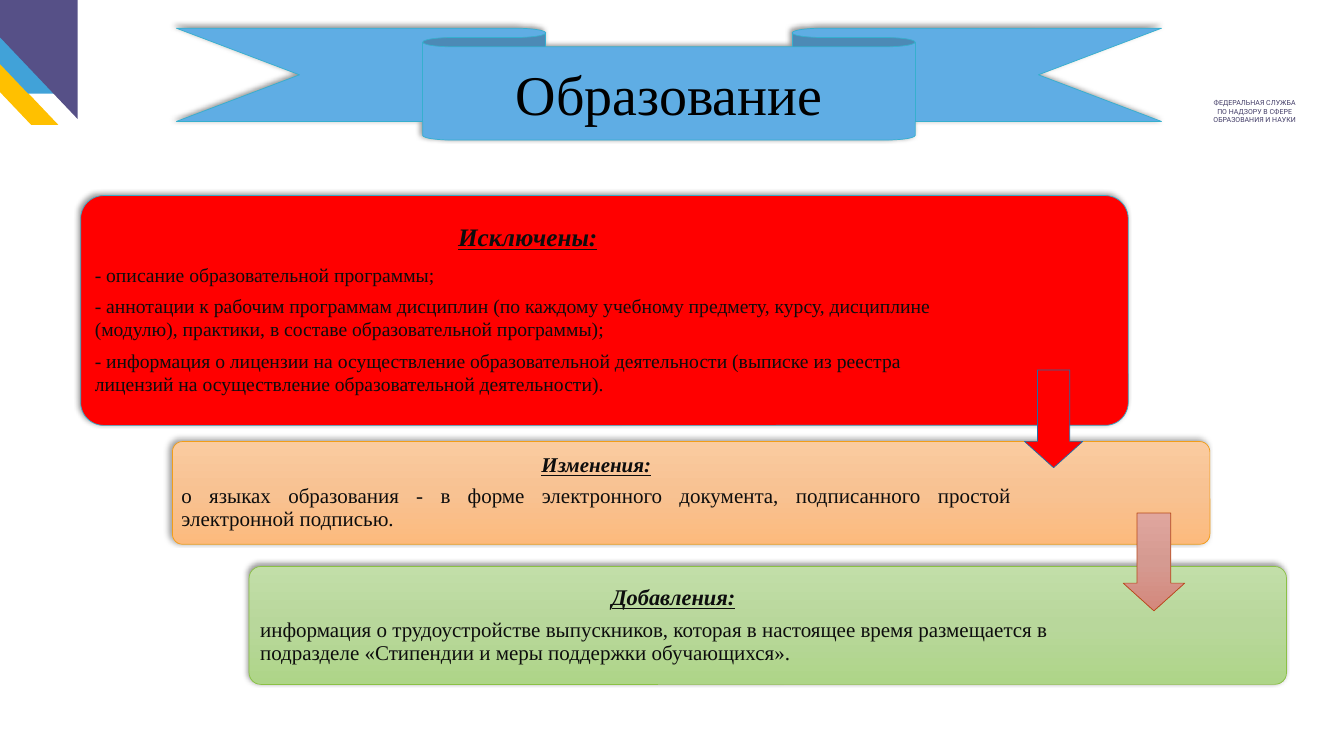
from dataclasses import dataclass

from lxml.etree import SubElement
from pptx import Presentation
from pptx.dml.color import RGBColor
from pptx.enum.shapes import MSO_SHAPE as Shape
from pptx.enum.text import MSO_ANCHOR as Anchor, MSO_AUTO_SIZE as AutoSize, PP_ALIGN as Align
from pptx.oxml.ns import qn
from pptx.util import Inches, Pt


@dataclass(frozen=True)
class Theme:
    serif: str = "Times New Roman"
    sans: str = "Roboto"
    black: str = "000000"
    ink: str = "0D0D0D"
    agency: str = "413B66"
    gold: str = "FFC000"
    sky: str = "41A2D8"
    violet: str = "565087"
    ribbon: str = "5FADE4"
    teal: str = "36AFCE"
    red: str = "FF0000"
    arrow_line: str = "1D6FA9"
    orange: tuple = ("FACBA0", "F8C292", "FCBA7D")
    orange_line: str = "F19D19"
    green: tuple = ("C2DEA8", "B8D79B", "AED588")
    green_line: str = "8BC145"
    rose: tuple = ("E0A69E", "D59A91", "D4887C")
    rose_line: str = "B74919"
    title_size: float = 40
    agency_size: float = 5
    body_size: float = 14
    note_size: float = 15
    line_width: float = 0.5


def write(frame, text, first=False, size=14, font="Times New Roman", color="000000",
          align=Align.LEFT, heading=False, spacing=1.0, after=0):
    paragraph = frame.paragraphs[0] if first else frame.add_paragraph()
    paragraph.alignment = align
    paragraph.line_spacing = spacing
    paragraph.space_before = Pt(0)
    paragraph.space_after = Pt(after)
    run = paragraph.add_run()
    run.text = text
    run.font.name = font
    run.font.size = Pt(size)
    run.font.color.rgb = RGBColor.from_string(color)
    run.font.bold = run.font.italic = run.font.underline = heading


class SlideBuilder:
    def __init__(self, slide, theme):
        self.slide = slide
        self.theme = theme

    def shape(self, kind, box, fill, line=None, adjustments=(), flip=(), shadow=False):
        shape = self.slide.shapes.add_shape(kind, *map(Inches, box))
        shape.shadow.inherit = False
        for index, value in enumerate(adjustments):
            shape.adjustments[index] = value
        for attribute in flip:
            shape._element.spPr.xfrm.set(attribute, "1")
        if isinstance(fill, tuple):
            self.gradient(shape, fill)
        else:
            shape.fill.solid()
            shape.fill.fore_color.rgb = RGBColor.from_string(fill)
        if line:
            shape.line.color.rgb = RGBColor.from_string(line)
            shape.line.width = Pt(self.theme.line_width)
        else:
            shape.line.fill.background()
        if shadow:
            self.shadow(shape)
        return shape

    def gradient(self, shape, colors):
        shape.fill.gradient()
        shape.fill.gradient_angle = 270
        stops = shape._element.spPr.find(qn("a:gradFill")).find(qn("a:gsLst"))
        for stop in list(stops):
            stops.remove(stop)
        for index, color in enumerate(colors):
            stop = SubElement(stops, qn("a:gs"), pos=str(index * 50000))
            SubElement(stop, qn("a:srgbClr"), val=color)

    def shadow(self, shape):
        effects = shape._element.spPr.find(qn("a:effectLst"))
        outer = SubElement(effects, qn("a:outerShdw"), blurRad=str(Pt(4)), dist=str(Pt(3)),
                           dir=str(225 * 60000), algn="br", rotWithShape="0")
        color = SubElement(outer, qn("a:srgbClr"), val=self.theme.black)
        SubElement(color, qn("a:alpha"), val="40000")

    def text_box(self, box, inset=None):
        frame = self.slide.shapes.add_textbox(*map(Inches, box)).text_frame
        frame.word_wrap = True
        if inset is not None:
            frame.vertical_anchor = Anchor.MIDDLE
            frame.margin_left = frame.margin_right = Inches(inset)
            frame.margin_top = frame.margin_bottom = Inches(inset)
        return frame

    def title(self, text, box):
        title = self.slide.shapes.title
        title.left, title.top, title.width, title.height = map(Inches, box)
        self.slide.shapes._spTree.append(title._element)
        frame = title.text_frame
        frame.word_wrap = True
        frame.auto_size = AutoSize.NONE
        frame.vertical_anchor = Anchor.MIDDLE
        write(frame, text, first=True, size=self.theme.title_size, font=self.theme.serif,
              color=self.theme.black, align=Align.CENTER)

    def card(self, box, text_area, inset, fill, line, heading, heading_size, body,
             body_size, body_align=Align.LEFT, body_spacing=0.9):
        self.shape(Shape.ROUNDED_RECTANGLE, box, fill, line, adjustments=[0.1], shadow=True)
        frame = self.text_box(text_area, inset)
        style = dict(font=self.theme.serif, color=self.theme.ink)
        write(frame, heading, first=True, size=heading_size, align=Align.CENTER,
              heading=True, spacing=0.9, after=heading_size * 0.4, **style)
        for text in body:
            write(frame, text, size=body_size, align=body_align, spacing=body_spacing,
                  after=body_size * 0.4, **style)

    def arrow(self, box, fill, line):
        self.shape(Shape.DOWN_ARROW, box, fill, line, adjustments=[0.55, 0.45])


def main():
    presentation = Presentation()
    presentation.slide_width = Inches(13.33)
    presentation.slide_height = Inches(7.5)
    theme = Theme()
    slide = presentation.slides.add_slide(presentation.slide_layouts[5])
    builder = SlideBuilder(slide, theme)

    for left, top, color in [(-0.83, 0.04, theme.gold), (-0.86, -0.27, theme.sky)]:
        builder.shape(Shape.PARALLELOGRAM, (left, top, 1.41, 1.2), color,
                      adjustments=[0.95], flip=["flipH"])
    builder.shape(Shape.RIGHT_TRIANGLE, (-0.36, -0.01, 1.13, 1.19), theme.violet,
                  flip=["flipH", "flipV"])

    agency = builder.text_box((11.77, 0.93, 1.35, 0.35))
    for index, text in enumerate(["ФЕДЕРАЛЬНАЯ СЛУЖБА", "ПО НАДЗОРУ В СФЕРЕ ОБРАЗОВАНИЯ И НАУКИ"]):
        write(agency, text, first=index == 0, size=theme.agency_size, font=theme.sans,
              color=theme.agency, align=Align.CENTER)

    builder.shape(Shape.DOWN_RIBBON, (1.75, 0.28, 9.77, 1.11), theme.ribbon, theme.teal,
                  shadow=True)
    builder.title("Образование", (4.19, 0.46, 4.89, 0.93))

    builder.card(
        (0.8, 1.94, 10.39, 2.28), (0.87, 2.01, 8.73, 2.14), 0.07, theme.red, theme.teal,
        "Исключены:", 18,
        ["- описание образовательной программы;",
         "- аннотации к рабочим программам дисциплин (по каждому учебному предмету, курсу, "
         "дисциплине (модулю), практики, в составе образовательной программы);",
         "- информация о лицензии на осуществление образовательной деятельности (выписке из "
         "реестра лицензий на осуществление образовательной деятельности)."],
        theme.body_size, body_spacing=1.0)
    builder.card(
        (1.71, 4.38, 10.29, 1.02), (1.74, 4.41, 8.35, 0.96), 0.06, theme.orange,
        theme.orange_line, "Изменения:", 15,
        ["о языках образования - в форме электронного документа, подписанного простой "
         "электронной подписью."],
        theme.note_size, body_align=Align.JUSTIFY)
    builder.card(
        (2.47, 5.62, 10.29, 1.17), (2.51, 5.66, 8.34, 1.1), 0.07, theme.green,
        theme.green_line, "Добавления:", 16,
        ["информация о трудоустройстве выпускников, которая в настоящее время размещается в "
         "подразделе «Стипендии и меры поддержки обучающихся»."],
        theme.note_size)

    builder.arrow((10.16, 3.67, 0.58, 0.97), theme.red, theme.arrow_line)
    builder.arrow((11.14, 5.09, 0.61, 0.97), theme.rose, theme.rose_line)

    presentation.save("out.pptx")


if __name__ == "__main__":
    main()
